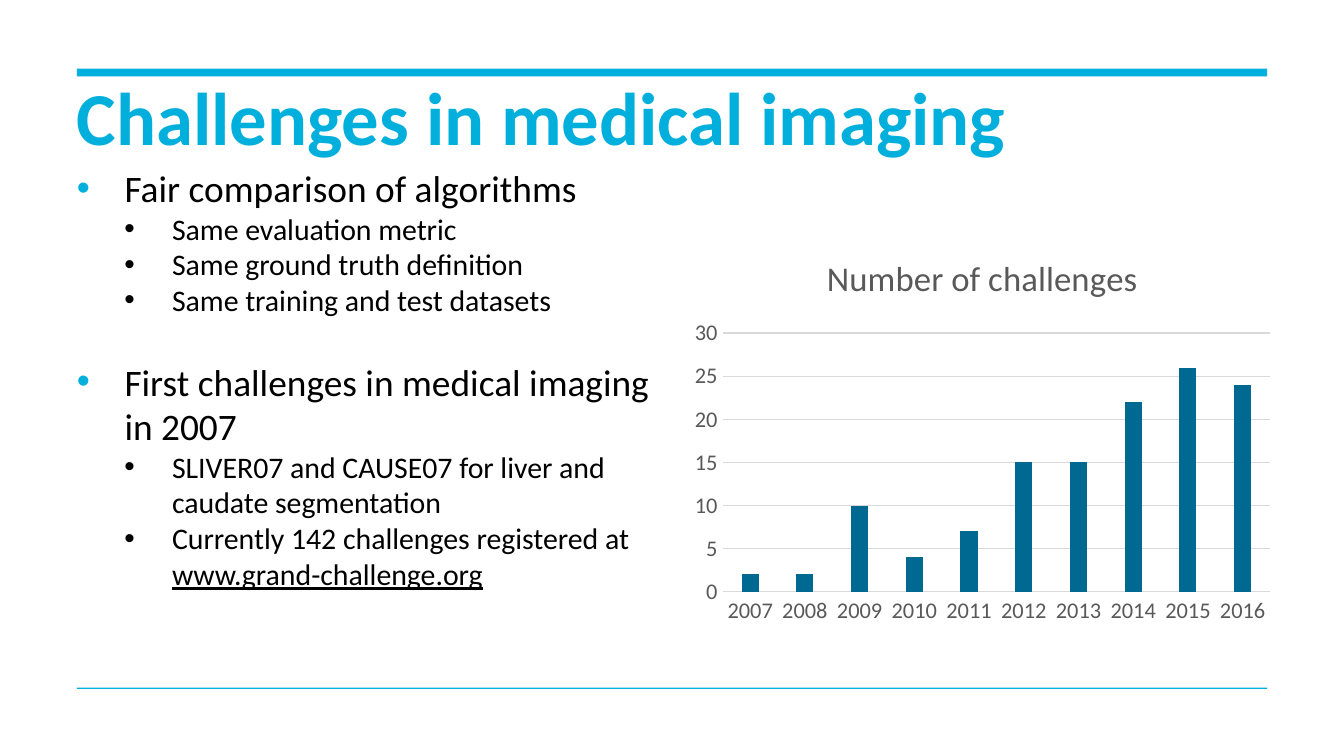
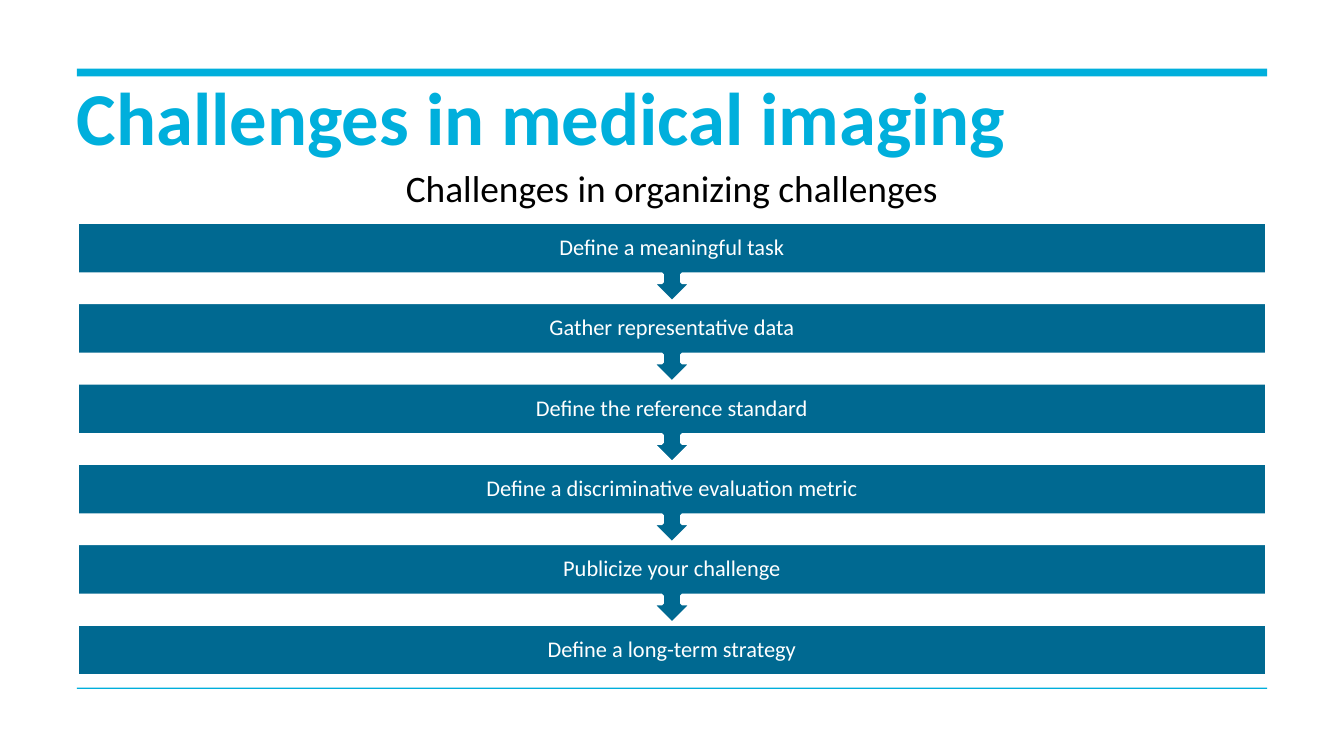
"""Build two slides on challenges in medical imaging."""
from typing import NamedTuple

from lxml.etree import SubElement
from pptx import Presentation
from pptx.chart.data import CategoryChartData
from pptx.dml.color import RGBColor
from pptx.enum.chart import XL_CHART_TYPE, XL_TICK_MARK
from pptx.enum.shapes import MSO_SHAPE
from pptx.enum.text import MSO_ANCHOR, MSO_AUTO_SIZE, PP_ALIGN
from pptx.oxml.ns import qn
from pptx.util import Pt

FONT = "Calibri"
COLORS = {
    "accent": "00AFDC",
    "dark": "006991",
    "text": "000000",
    "muted": "595959",
    "grid": "D9D9D9",
    "white": "FFFFFF",
}
LEFT, WIDTH = 41.2, 637.6
BODY_TOP = 88.6
HANGING = 25.5
STEP_TOP, STEP_PITCH = 118.9, 43.05
CALLOUT_HEIGHT, BOX_HEIGHT = 43.05, 28


class Bullet(NamedTuple):
    text: str
    level: int = 0
    space_before: float = 0
    link: str = ""


class Rule(NamedTuple):
    top: float
    height: float


RULES = [Rule(36.8, 4.2), Rule(368.4, 0.72)]
BULLETS = [
    Bullet("Fair comparison of algorithms"),
    Bullet("Same evaluation metric", 1),
    Bullet("Same ground truth definition", 1),
    Bullet("Same training and test datasets", 1),
    Bullet("First challenges in medical imaging in 2007", space_before=22),
    Bullet("SLIVER07 and CAUSE07 for liver and caudate segmentation", 1),
    Bullet("Currently 142 challenges registered at ", 1, link="www.grand-challenge.org"),
]
CHALLENGES = {
    "2007": 2, "2008": 2, "2009": 10, "2010": 4, "2011": 7,
    "2012": 15, "2013": 15, "2014": 22, "2015": 26, "2016": 24,
}
STEPS = [
    "Define a meaningful task",
    "Gather representative data",
    "Define the reference standard",
    "Define a discriminative evaluation metric",
    "Publicize your challenge",
    "Define a long-term strategy",
]


def rgb(name: str) -> RGBColor:
    """Return a palette colour."""
    return RGBColor.from_string(COLORS[name])


def set_font(font, size: float, color: str, bold: bool = False) -> None:
    """Apply the deck's typeface with a size and colour."""
    font.name, font.size, font.bold = FONT, Pt(size), bold
    font.color.rgb = rgb(color)


def clear_margins(text_frame) -> None:
    """Wrap the text and remove its insets."""
    text_frame.word_wrap = True
    text_frame.auto_size = MSO_AUTO_SIZE.NONE
    text_frame.margin_left = text_frame.margin_right = 0
    text_frame.margin_top = text_frame.margin_bottom = 0


def add_block(slide, kind: MSO_SHAPE, top: float, height: float, color: str):
    """Add a filled, full-width shape."""
    shape = slide.shapes.add_shape(kind, Pt(LEFT), Pt(top), Pt(WIDTH), Pt(height))
    shape.shadow.inherit = False
    shape.fill.solid()
    shape.fill.fore_color.rgb = rgb(color)
    shape.line.fill.background()
    return shape


def add_titled_slide(presentation, title: str):
    """Add a slide with the shared rules and title style."""
    slide = presentation.slides.add_slide(presentation.slide_layouts[5])
    for rule in RULES:
        add_block(slide, MSO_SHAPE.RECTANGLE, rule.top, rule.height, "accent")
    shape = slide.shapes.title
    shape.left, shape.top, shape.width, shape.height = Pt(LEFT), Pt(44), Pt(WIDTH), Pt(42)
    text_frame = shape.text_frame
    clear_margins(text_frame)
    text_frame.vertical_anchor = MSO_ANCHOR.MIDDLE
    text_frame.text = title
    paragraph = text_frame.paragraphs[0]
    paragraph.alignment = PP_ALIGN.LEFT
    paragraph.line_spacing = Pt(42)
    set_font(paragraph.font, 40, "accent", bold=True)
    return slide


def add_body(slide, width: float, height: float):
    """Add the text area below the title and return its text frame."""
    box = slide.shapes.add_textbox(Pt(LEFT), Pt(BODY_TOP), Pt(width), Pt(height))
    clear_margins(box.text_frame)
    return box.text_frame


def set_bullet(paragraph, level: int) -> None:
    """Give a paragraph a hanging bullet for its level."""
    paragraph.level = level
    properties = paragraph._p.get_or_add_pPr()
    properties.set("marL", str(Pt(HANGING * (level + 1))))
    properties.set("indent", str(-Pt(HANGING)))
    color = SubElement(properties, qn("a:buClr"))
    SubElement(color, qn("a:srgbClr"), val=COLORS["text" if level else "accent"])
    SubElement(properties, qn("a:buFont"), typeface="Arial")
    SubElement(properties, qn("a:buChar"), char="•")


def add_bullets(slide, bullets: list[Bullet]) -> None:
    """Fill the left column with two levels of bullets."""
    text_frame = add_body(slide, 313.2, 280)
    for index, bullet in enumerate(bullets):
        paragraph = text_frame.add_paragraph() if index else text_frame.paragraphs[0]
        set_bullet(paragraph, bullet.level)
        if bullet.space_before:
            paragraph.space_before = Pt(bullet.space_before)
        set_font(paragraph.font, 16 if bullet.level else 20, "text")
        paragraph.add_run().text = bullet.text
        if bullet.link:
            run = paragraph.add_run()
            run.text = bullet.link
            run.font.underline = True


def add_challenge_chart(slide) -> None:
    """Add the column chart of challenges per year."""
    name = "Number of challenges"
    data = CategoryChartData()
    data.categories = list(CHALLENGES)
    data.add_series(name, list(CHALLENGES.values()))
    chart = slide.shapes.add_chart(
        XL_CHART_TYPE.COLUMN_CLUSTERED, Pt(365.8), Pt(124.6), Pt(321), Pt(213.8), data
    ).chart
    set_font(chart.font, 10, "text")
    chart.has_legend = False
    chart.has_title = True
    title_frame = chart.chart_title.text_frame
    title_frame.text = name
    set_font(title_frame.paragraphs[0].font, 18.6, "muted")
    chart.chart_title.include_in_layout = False

    for axis in (chart.category_axis, chart.value_axis):
        axis.major_tick_mark = axis.minor_tick_mark = XL_TICK_MARK.NONE
        set_font(axis.tick_labels.font, 12, "muted")
    chart.value_axis.minimum_scale, chart.value_axis.maximum_scale = 0, 30
    chart.value_axis.major_unit = 5
    chart.value_axis.format.line.fill.background()
    for line in (chart.category_axis.format.line, chart.value_axis.major_gridlines.format.line):
        line.color.rgb = rgb("grid")
        line.width = Pt(0.75)

    plot = chart.plots[0]
    plot.gap_width, plot.overlap = 219, -27
    plot.vary_by_categories = False
    fill = plot.series[0].format.fill
    fill.solid()
    fill.fore_color.rgb = rgb("dark")


def add_step(slide, text: str, top: float, is_last: bool) -> None:
    """Add one process step, with an arrow unless it is the last."""
    kind = MSO_SHAPE.RECTANGLE if is_last else MSO_SHAPE.DOWN_ARROW_CALLOUT
    shape = add_block(slide, kind, top, BOX_HEIGHT if is_last else CALLOUT_HEIGHT, "dark")
    shape.line.color.rgb = rgb("white")
    shape.line.width = Pt(2)
    text_frame = shape.text_frame
    clear_margins(text_frame)
    text_frame.vertical_anchor = MSO_ANCHOR.MIDDLE
    text_frame.text = text
    paragraph = text_frame.paragraphs[0]
    paragraph.alignment = PP_ALIGN.CENTER
    paragraph.line_spacing = 0.9
    set_font(paragraph.font, 12, "white")


def add_process(slide, steps: list[str]) -> None:
    """Stack the steps from the bottom up so each arrow lies in front."""
    last = len(steps) - 1
    for index in range(last, -1, -1):
        add_step(slide, steps[index], STEP_TOP + index * STEP_PITCH, index == last)


def main() -> None:
    """Build and save the presentation."""
    presentation = Presentation()
    presentation.slide_width, presentation.slide_height = Pt(720), Pt(405)
    title = "Challenges in medical imaging"

    slide = add_titled_slide(presentation, title)
    add_bullets(slide, BULLETS)
    add_challenge_chart(slide)

    slide = add_titled_slide(presentation, title)
    text_frame = add_body(slide, WIDTH, 30)
    text_frame.text = "Challenges in organizing challenges"
    paragraph = text_frame.paragraphs[0]
    paragraph.alignment = PP_ALIGN.CENTER
    set_font(paragraph.font, 20, "text")
    add_process(slide, STEPS)

    presentation.save("out.pptx")


if __name__ == "__main__":
    main()
